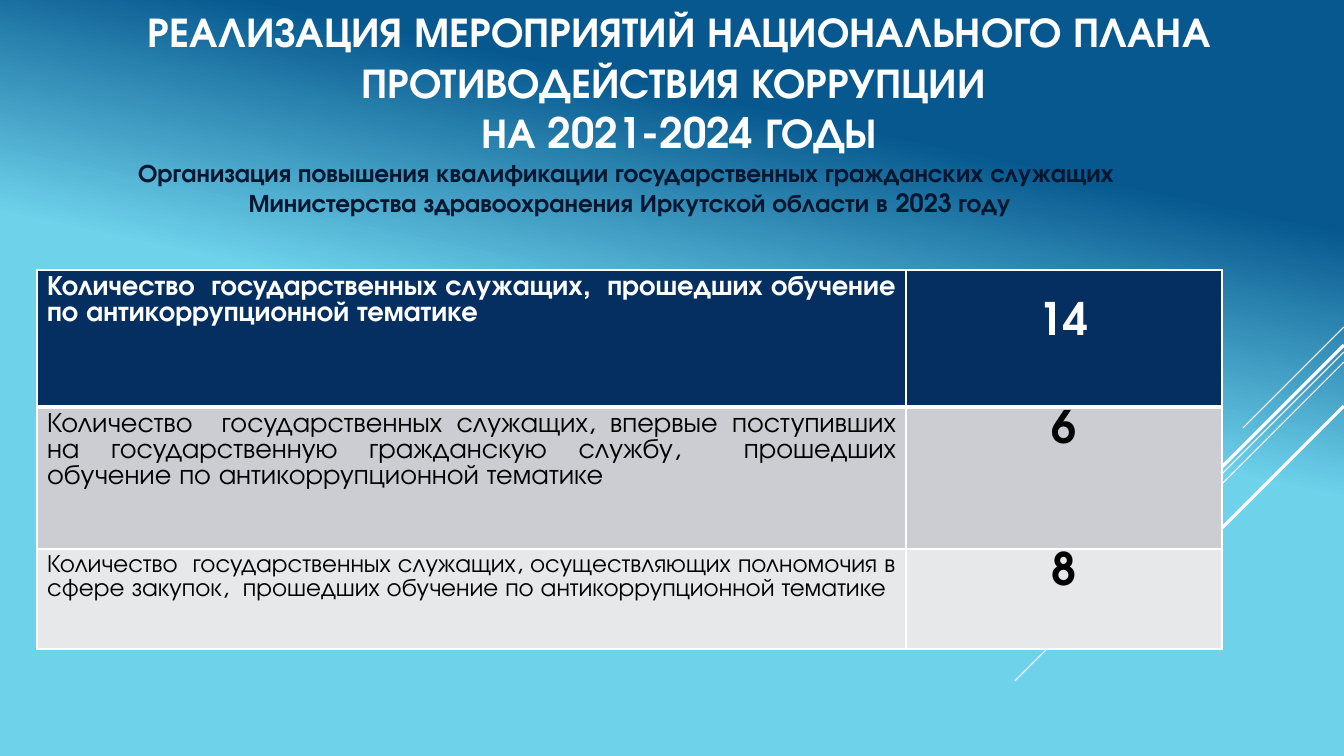
from lxml import etree
from pptx import Presentation
from pptx.dml.color import RGBColor
from pptx.enum.shapes import MSO_CONNECTOR
from pptx.enum.text import MSO_ANCHOR, PP_ALIGN
from pptx.oxml.ns import qn
from pptx.util import Emu, Pt

CENTER = PP_ALIGN.CENTER
JUSTIFY = PP_ALIGN.JUSTIFY
TOP = MSO_ANCHOR.TOP
MIDDLE = MSO_ANCHOR.MIDDLE
STRAIGHT = MSO_CONNECTOR.STRAIGHT

WIDTH, HEIGHT = 1344, 756
EMU_PER_PX = 914400 / 100.8
WHITE, BLACK, NAVY = "FFFFFF", "000000", "052F61"


def px(length):
    return Emu(round(length * EMU_PER_PX))


def rgb(value):
    return RGBColor.from_string(value)


class SlideBuilder:
    font = "TeX Gyre Adventor"
    line_spacing = 1.0
    label_margin = 5

    def __init__(self, presentation):
        self.slide = presentation.slides.add_slide(presentation.slide_layouts[5])

    def background(self, stops, angle):
        """Fill with a two-stop gradient; the angle runs clockwise."""
        fill = self.slide.background.fill
        fill.gradient()
        fill.gradient_angle = 360 - angle
        for stop, (position, color) in zip(fill.gradient_stops, stops):
            stop.position = position
            stop.color.rgb = rgb(color)

    def line(self, start, end, weight):
        connector = self.slide.shapes.add_connector(STRAIGHT, *map(px, start + end))
        connector.line.color.rgb = rgb(WHITE)
        connector.line.width = Pt(weight)
        etree.SubElement(connector._element.spPr, qn("a:effectLst"))

    def format_text(self, text_frame, size, color, bold, align):
        for paragraph in text_frame.paragraphs:
            paragraph.alignment = align
            paragraph.line_spacing = self.line_spacing
            for run in paragraph.runs:
                run.font.name = self.font
                run.font.size = Pt(size)
                run.font.bold = bold
                run.font.color.rgb = rgb(color)

    def place_text(self, shape, box, text, size, color, anchor):
        shape.left, shape.top, shape.width, shape.height = map(px, box)
        frame = shape.text_frame
        frame.text = text
        frame.word_wrap = True
        frame.vertical_anchor = anchor
        self.format_text(frame, size, color, True, CENTER)

    def title(self, box, text, size, color):
        self.place_text(self.slide.shapes.title, box, text, size, color, MIDDLE)

    def text(self, box, text, size, color):
        shape = self.slide.shapes.add_textbox(0, 0, 0, 0)
        self.place_text(shape, box, text, size, color, TOP)

    def cell_borders(self, cell, top, bottom):
        properties = cell._tc.get_or_add_tcPr()
        weights = {"a:lnL": 1, "a:lnR": 1, "a:lnT": top, "a:lnB": bottom}
        for position, (tag, weight) in enumerate(weights.items()):
            border = etree.Element(qn(tag), w=str(Pt(weight)))
            fill = etree.SubElement(border, qn("a:solidFill"))
            etree.SubElement(fill, qn("a:srgbClr"), val=WHITE)
            properties.insert(position, border)

    def table(self, left, top, widths, rows):
        """Each row: label, value, height, label size, fill, color, bold, value margin."""
        table = self.slide.shapes.add_table(
            len(rows), len(widths), px(left), px(top),
            px(sum(widths)), px(sum(row[2] for row in rows))).table
        for column, width in zip(table.columns, widths):
            column.width = px(width)
        for index, row in enumerate(rows):
            label, value, height, size, fill, color, bold, value_margin = row
            table.rows[index].height = px(height)
            contents = ((label, size, bold, JUSTIFY, self.label_margin),
                        (value, 32, True, CENTER, value_margin))
            for cell, content in zip(table.rows[index].cells, contents):
                text, text_size, text_bold, align, margin = content
                cell.text_frame.text = text
                cell.margin_top, cell.margin_bottom = px(margin), 0
                cell.fill.solid()
                cell.fill.fore_color.rgb = rgb(fill)
                self.format_text(cell.text_frame, text_size, color, text_bold, align)
                self.cell_borders(cell, 3 if index == 1 else 1, 3 if index == 0 else 1)


def main():
    presentation = Presentation()
    presentation.slide_width, presentation.slide_height = px(WIDTH), px(HEIGHT)
    builder = SlideBuilder(presentation)
    builder.background(((0.22, "06588E"), (0.48, "6ED2EB")), 102)

    # Diagonals at 45 degrees from the right edge: start height, run, weight
    for start, run, weight in ((327, 101, 0.75), (352, 329, 0.75), (362, 209, 0.75),
                               (345, 193, 2.25), (406, 140, 2.25)):
        builder.line((WIDTH, start), (WIDTH - run, start + run), weight)

    builder.title(
        (37, 0, 1285, 163),
        "РЕАЛИЗАЦИЯ МЕРОПРИЯТИЙ НАЦИОНАЛЬНОГО ПЛАНА ПРОТИВОДЕЙСТВИЯ КОРРУПЦИИ "
        "\vНА 2021-2024 ГОДЫ", 30, WHITE)
    builder.text(
        (31, 152, 1198, 71),
        "Организация повышения квалификации государственных гражданских служащих "
        "\vМинистерства здравоохранения Иркутской области в 2023 году", 18, "031730")
    builder.table(37, 270, (869, 316), (
        ("Количество  государственных служащих,  прошедших обучение "
         "по антикоррупционной тематике",
         "14", 137, 20, NAVY, WHITE, True, 32),
        ("Количество  государственных служащих, впервые поступивших на государственную "
         "гражданскую службу,  прошедших обучение по антикоррупционной тематике",
         "6", 142, 20, "CCCDD2", BLACK, False, 3),
        ("Количество  государственных служащих, осуществляющих полномочия "
         "в сфере закупок,  прошедших обучение по антикоррупционной тематике",
         "8", 100, 18, "E7E8EA", BLACK, False, 3),
    ))
    presentation.save("out.pptx")


if __name__ == "__main__":
    main()
